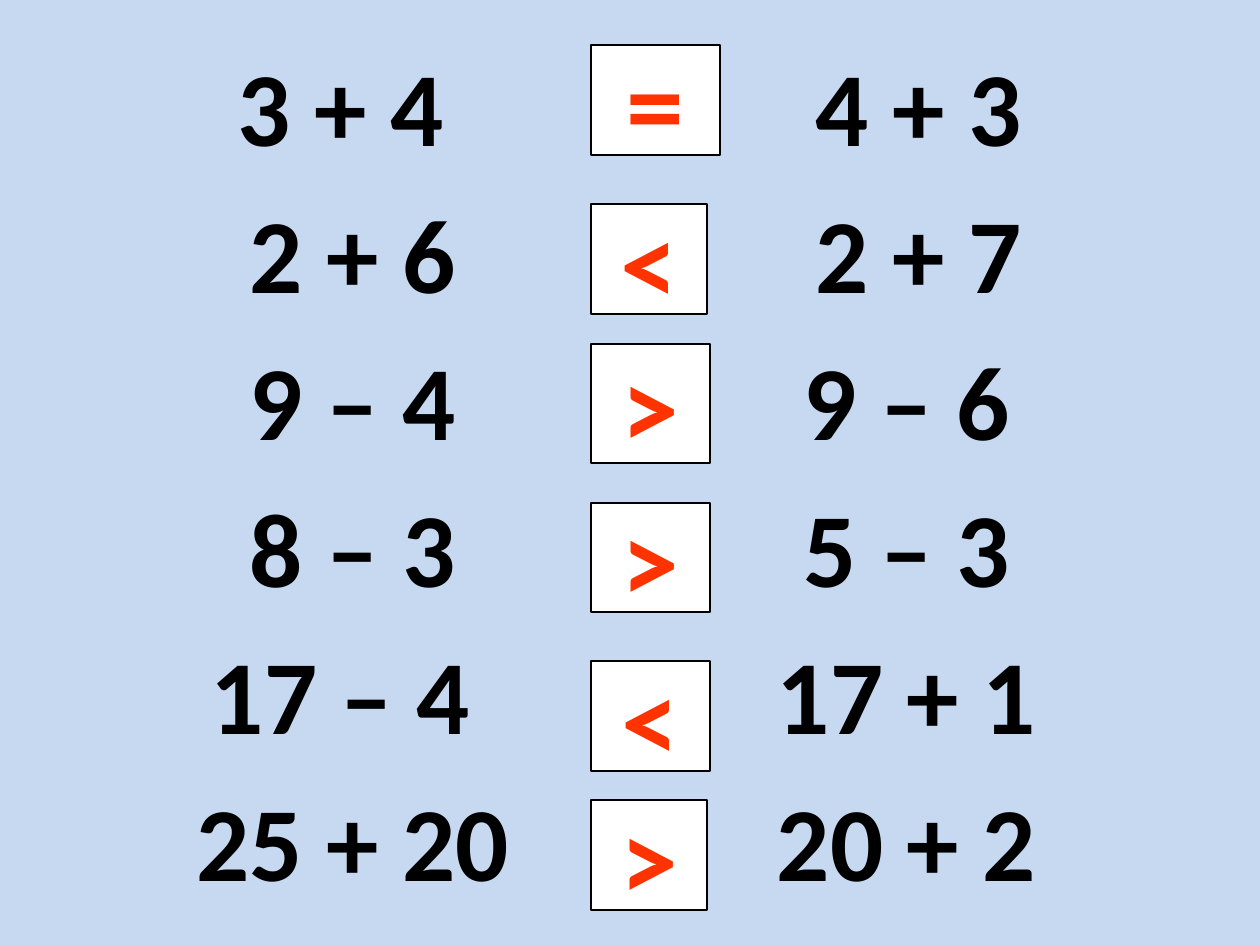
"""Build a slide comparing pairs of sums with relation signs."""
from dataclasses import dataclass

from lxml import etree
from pptx import Presentation
from pptx.dml.color import RGBColor
from pptx.enum.shapes import MSO_SHAPE
from pptx.enum.text import MSO_ANCHOR, MSO_AUTO_SIZE, PP_ALIGN
from pptx.oxml.ns import qn
from pptx.util import Emu, Pt

RECTANGLE = MSO_SHAPE.RECTANGLE
MIDDLE = MSO_ANCHOR.MIDDLE
NO_AUTOFIT = MSO_AUTO_SIZE.NONE
CENTER = PP_ALIGN.CENTER

PIXELS_PER_INCH = 126
SLIDE_SIZE = (1260, 945)
TWO_CONTENT_LAYOUT = 3

LEFT_BOX = (74, 35, 557, 963)
RIGHT_BOX = (640, 35, 557, 973)
LEFT_SUMS = ("3 + 4 ", "2 + 6", "9 – 4", "8 – 3", "17 – 4 ", "25 + 20")
RIGHT_SUMS = ("4 + 3", "2 + 7", "9 – 6 ", "5 – 3 ", "17 + 1 ", "20 + 2 ")

SIGN_LEFT = 591
SIGNS = (
    ("=", 45, 129, 110),
    ("<", 204, 116, 110),
    (">", 344, 119, 119),
    (">", 503, 119, 109),
    ("<", 661, 119, 110),
    (">", 800, 116, 110),
)


@dataclass(frozen=True)
class Theme:
    """Hold the colours, font and type sizes of the slide."""

    background: RGBColor = RGBColor(0xC6, 0xD9, 0xF1)
    ink: RGBColor = RGBColor(0x00, 0x00, 0x00)
    card: RGBColor = RGBColor(0xFF, 0xFF, 0xFF)
    sign: RGBColor = RGBColor(0xFF, 0x33, 0x00)
    font: str = "Calibri"
    sum_size: Pt = Pt(60)
    sign_size: Pt = Pt(66)
    line_width: Pt = Pt(0.75)


THEME = Theme()


def px(length):
    """Turn a length in pixels into EMU."""
    return Emu(round(length * 914400 / PIXELS_PER_INCH))


def add_text(paragraph, text, size, color):
    """Add one bold centred run to a paragraph."""
    paragraph.alignment = CENTER
    run = paragraph.add_run()
    run.text = text
    run.font.name = THEME.font
    run.font.size = size
    run.font.bold = True
    run.font.color.rgb = color


def fill_sum_column(placeholder, box, sums):
    """Move a body placeholder to its box and list the sums without bullets."""
    placeholder.left, placeholder.top, placeholder.width, placeholder.height = map(px, box)
    frame = placeholder.text_frame
    frame.auto_size = NO_AUTOFIT
    for index, text in enumerate(sums):
        paragraph = frame.add_paragraph() if index else frame.paragraphs[0]
        add_text(paragraph, text, THEME.sum_size, THEME.ink)
        etree.SubElement(paragraph._p.get_or_add_pPr(), qn("a:buNone"))


def add_sign_card(slide, box, sign):
    """Draw a bordered card holding one relation sign."""
    card = slide.shapes.add_shape(RECTANGLE, *map(px, box))
    card.shadow.inherit = False
    card.fill.solid()
    card.fill.fore_color.rgb = THEME.card
    card.line.color.rgb = THEME.ink
    card.line.width = THEME.line_width
    frame = card.text_frame
    frame.word_wrap = False
    frame.vertical_anchor = MIDDLE
    add_text(frame.paragraphs[0], sign, THEME.sign_size, THEME.sign)


def build_comparison_slide(presentation):
    """Place both columns of sums and the signs between them."""
    slide = presentation.slides.add_slide(presentation.slide_layouts[TWO_CONTENT_LAYOUT])
    slide.background.fill.solid()
    slide.background.fill.fore_color.rgb = THEME.background
    title = slide.shapes.title
    title.element.getparent().remove(title.element)
    fill_sum_column(slide.placeholders[1], LEFT_BOX, LEFT_SUMS)
    fill_sum_column(slide.placeholders[2], RIGHT_BOX, RIGHT_SUMS)
    for sign, top, width, height in SIGNS:
        add_sign_card(slide, (SIGN_LEFT, top, width, height), sign)


def main():
    """Create the presentation and save it."""
    presentation = Presentation()
    presentation.slide_width, presentation.slide_height = map(px, SLIDE_SIZE)
    build_comparison_slide(presentation)
    presentation.save("out.pptx")


if __name__ == "__main__":
    main()
